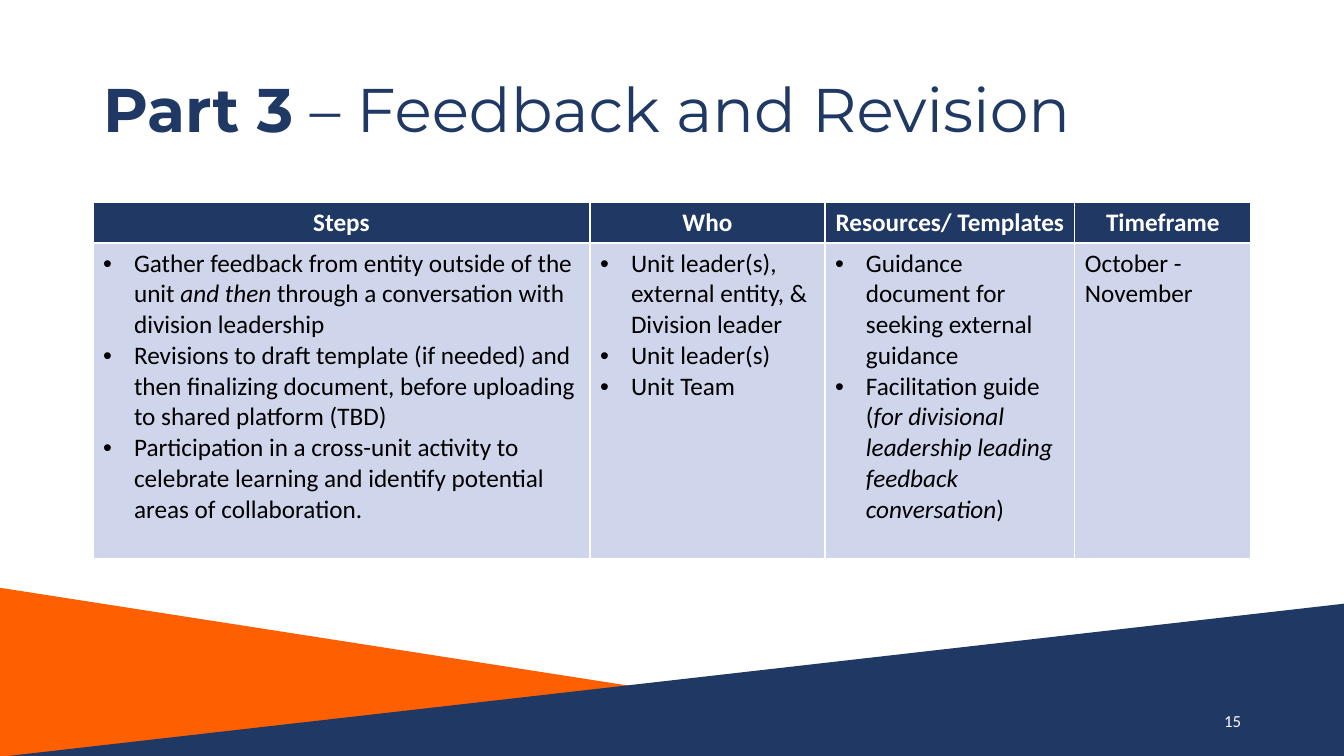
from lxml.etree import SubElement
from pptx import Presentation
from pptx.dml.color import RGBColor
from pptx.enum.shapes import MSO_SHAPE as Shape
from pptx.enum.text import MSO_ANCHOR as Anchor, MSO_AUTO_SIZE as AutoSize, PP_ALIGN as Align
from pptx.oxml.ns import qn
from pptx.util import Pt

NAVY = RGBColor(0x20, 0x38, 0x64)
ORANGE = RGBColor(0xFE, 0x5F, 0x00)
PALE_BLUE = RGBColor(0xCF, 0xD5, 0xEA)
WHITE = RGBColor(0xFF, 0xFF, 0xFF)
BLACK = RGBColor(0x00, 0x00, 0x00)

# Content: a paragraph is a list of (text, emphasised) runs
TITLE = [("Part 3", True), (" – Feedback and Revision", False)]
PAGE_NUMBER = "15"
# heading, column width, bulleted, paragraphs
COLUMNS = [
    ("Steps", 497, True, [
        [("Gather feedback from entity outside of the unit ", False), ("and then", True),
         (" through a conversation with division leadership", False)],
        [("Revisions to draft template (if needed) and then finalizing document, "
          "before uploading to shared platform (TBD)", False)],
        [("Participation in a cross-unit activity to celebrate learning and "
          "identify potential areas of collaboration.", False)],
    ]),
    ("Who", 235, True, [
        [("Unit leader(s), external entity, & Division leader", False)],
        [("Unit leader(s)", False)],
        [("Unit Team", False)],
    ]),
    ("Resources/ Templates", 250, True, [
        [("Guidance document for seeking external guidance", False)],
        [("Facilitation guide (", False),
         ("for divisional leadership leading feedback conversation", True), (")", False)],
    ]),
    ("Timeframe", 176, False, [[("October - November", False)]]),
]
# left, top, width, height, colour, flipped
TRIANGLES = [
    (-5, 587, 1086, 169, ORANGE, True),
    (8, 603, 1342, 153, NAVY, False),
]
ROW_HEIGHTS = [41, 316]
TABLE_LEFT, TABLE_TOP = 93, 202
BULLET_INDENT = 31


def px(length):
    return round(length * 914400 / 100.8)


def style(font, name, size, color):
    font.name = name
    font.size = Pt(size)
    font.color.rgb = color


def add_bullet(paragraph):
    properties = paragraph._p.get_or_add_pPr()
    properties.set("marL", str(px(BULLET_INDENT)))
    properties.set("indent", str(-px(BULLET_INDENT)))
    SubElement(properties, qn("a:buFont")).set("typeface", "Arial")
    SubElement(properties, qn("a:buChar")).set("char", "•")


def add_runs(paragraph, runs, name, size, color, emphasis):
    for text, emphasised in runs:
        run = paragraph.add_run()
        run.text = text
        style(run.font, name, size, color)
        run.font.bold = emphasised and emphasis == "bold"
        run.font.italic = emphasised and emphasis == "italic"


def add_triangles(slide):
    for left, top, width, height, color, flipped in TRIANGLES:
        shape = slide.shapes.add_shape(
            Shape.ISOSCELES_TRIANGLE, px(left), px(top), px(width), px(height))
        shape.adjustments[0] = 1
        shape.shadow.inherit = False
        shape.fill.solid()
        shape.fill.fore_color.rgb = color
        shape.line.fill.background()
        if flipped:
            shape._element.spPr.xfrm.set("flipH", "1")


def add_title(slide):
    title = slide.shapes.title
    title.left, title.top, title.width, title.height = px(93), px(40), px(1159), px(146)
    frame = title.text_frame
    frame.auto_size = AutoSize.NONE
    frame.vertical_anchor = Anchor.MIDDLE
    paragraph = frame.paragraphs[0]
    paragraph.alignment = Align.LEFT
    paragraph.line_spacing = 0.9
    add_runs(paragraph, TITLE, "Montserrat", 44, NAVY, "bold")


def add_steps_table(slide):
    widths = [column[1] for column in COLUMNS]
    table = slide.shapes.add_table(
        len(ROW_HEIGHTS), len(COLUMNS), px(TABLE_LEFT), px(TABLE_TOP),
        px(sum(widths)), px(sum(ROW_HEIGHTS))).table
    table.horz_banding = False
    for row, height in zip(table.rows, ROW_HEIGHTS):
        row.height = px(height)
    for index, (heading, width, bulleted, paragraphs) in enumerate(COLUMNS):
        table.columns[index].width = px(width)
        header, body = table.cell(0, index), table.cell(1, index)
        for cell, color in ((header, NAVY), (body, PALE_BLUE)):
            cell.fill.solid()
            cell.fill.fore_color.rgb = color

        # Heading cell
        header.vertical_anchor = Anchor.MIDDLE
        paragraph = header.text_frame.paragraphs[0]
        paragraph.alignment = Align.CENTER
        add_runs(paragraph, [(heading, True)], "Calibri", 18, WHITE, "bold")

        # Body cell
        frame = body.text_frame
        for number, runs in enumerate(paragraphs):
            paragraph = frame.add_paragraph() if number else frame.paragraphs[0]
            if bulleted:
                add_bullet(paragraph)
            add_runs(paragraph, runs, "Calibri", 18, BLACK, "italic")


def add_page_number(slide):
    frame = slide.shapes.add_textbox(px(949), px(701), px(302), px(40)).text_frame
    frame.word_wrap = True
    frame.vertical_anchor = Anchor.MIDDLE
    frame.text = PAGE_NUMBER
    paragraph = frame.paragraphs[0]
    paragraph.alignment = Align.RIGHT
    style(paragraph.runs[0].font, "Calibri", 12, WHITE)


def main():
    presentation = Presentation()
    presentation.slide_width, presentation.slide_height = px(1344), px(756)
    slide = presentation.slides.add_slide(presentation.slide_layouts[5])
    add_triangles(slide)
    add_title(slide)
    add_steps_table(slide)
    add_page_number(slide)
    presentation.save("out.pptx")


if __name__ == "__main__":
    main()
